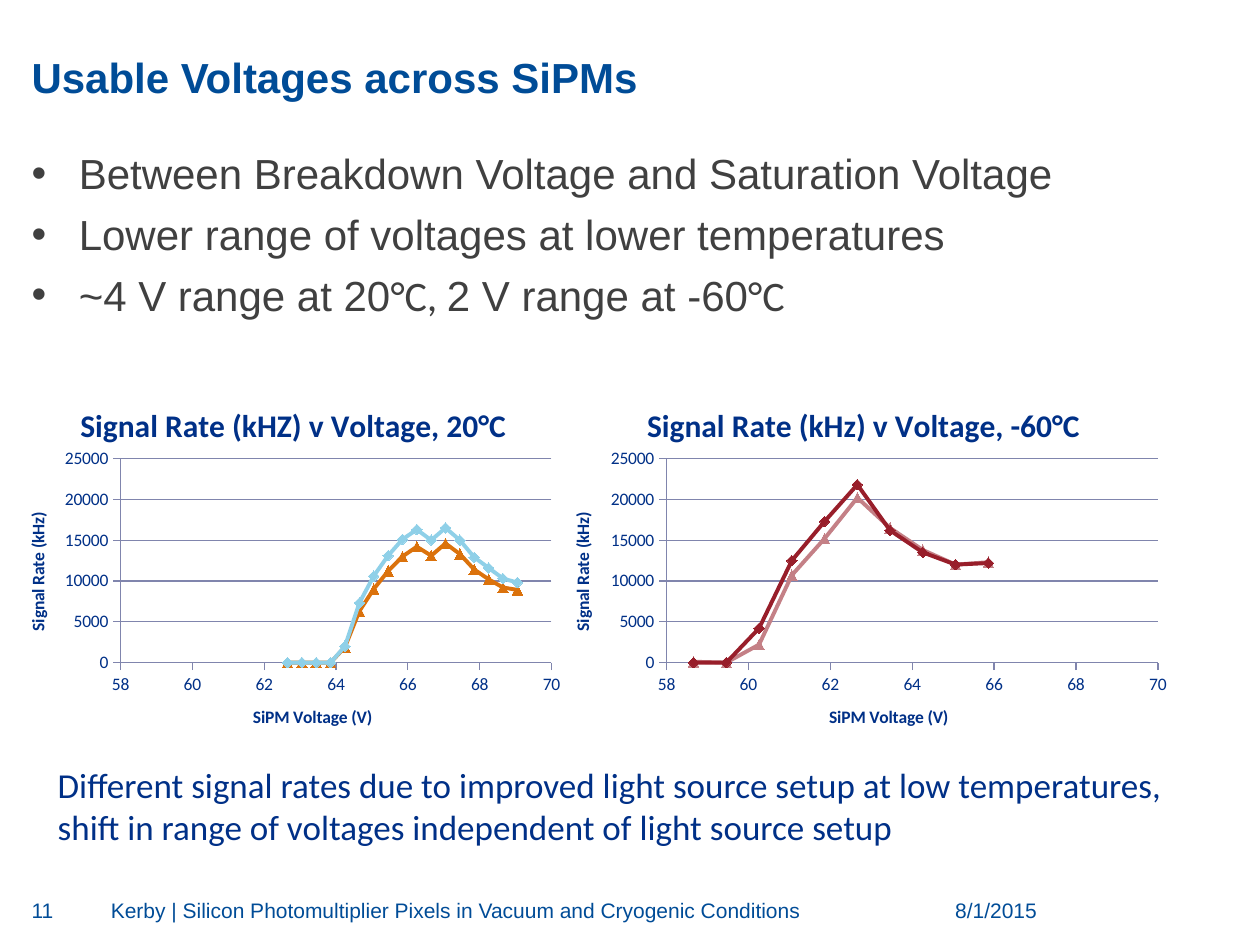
from lxml import etree
from pptx import Presentation
from pptx import util as u
from pptx.chart import data as chart_data
from pptx.dml import color
from pptx.enum import chart as chart_enum, text
from pptx.oxml import ns

COLORS = {
    "heading": "004C97", "body": "404040", "navy": "003087", "grid": "8085AD",
    "sky": "8FD0E8", "orange": "DB720C", "crimson": "981E2A", "rose": "C48086",
}
FORMATS = {
    "title": {"size": 24, "name": "Arial", "color": "heading", "bold": True},
    "body": {"size": 24, "name": "Arial", "color": "body"},
    "degree": {"size": 24, "name": "Calibri", "color": "body"},
    "footer": {"size": 12, "name": "Arial", "color": "heading"},
    "note": {"size": 20, "name": "Calibri", "color": "navy"},
    "chart": {"size": 10, "name": "Calibri", "color": "navy"},
    "chart title": {"size": 18, "name": "Calibri", "color": "navy", "bold": True},
    "axis title": {"size": 10, "name": "Calibri", "color": "navy", "bold": True},
}
BULLETS = [
    [("Between Breakdown Voltage and Saturation Voltage", "body")],
    [("Lower range of voltages at lower temperatures", "body")],
    [("~4 V range at 20", "body"), ("°C, ", "degree"),
     ("2 V range at -60", "body"), ("°C", "degree")],
]
FOOTERS = [
    ("8/1/2015", (7.05, 7.12, 1.18, 0.26), text.PP_ALIGN.RIGHT),
    ("Kerby | Silicon Photomultiplier Pixels in Vacuum and Cryogenic Conditions",
     (0.88, 7.12, 5.88, 0.26), text.PP_ALIGN.LEFT),
    ("11", (0.25, 7.12, 0.49, 0.26), text.PP_ALIGN.LEFT),
]
CHARTS = [
    {"box": (0, 2.98, 4.56, 3), "title": "Signal Rate (kHZ) v Voltage, 20°C",
     "title_at": (0.13, 0.06), "plot": (0.21, 0.22, 0.75, 0.54),
     "start": 69.05, "step": 0.4, "colors": ("sky", "orange"),
     "rates": ([9800, 10300, 11600, 12900, 15000, 16500, 15000, 16300, 15100,
                13100, 10600, 7300, 2000, 0, 0, 0, 0],
               [8900, 9200, 10200, 11400, 13300, 14600, 13100, 14200, 13000,
                11200, 9000, 6300, 1900, 0, 0, 0, 0])},
    {"box": (4.34, 2.98, 5, 3), "title": "Signal Rate (kHz) v Voltage, -60°C",
     "title_at": (0.15, 0.06), "plot": (0.19, 0.22, 0.78, 0.54),
     "start": 65.86, "step": 0.8, "colors": ("crimson", "rose"),
     "rates": ([12200, 12000, 13500, 16200, 21800, 17300, 12500, 4200, 0, 0],
               [12300, 12000, 13800, 16500, 20200, 15200, 10700, 2200, 0, 100])},
]
MARKERS = (chart_enum.XL_MARKER_STYLE.DIAMOND, chart_enum.XL_MARKER_STYLE.TRIANGLE)


def rgb(name):
    return color.RGBColor.from_string(COLORS[name])


def format_font(font, style):
    for attribute, value in FORMATS[style].items():
        if attribute == "color":
            font.color.rgb = rgb(value)
        else:
            setattr(font, attribute, u.Pt(value) if attribute == "size" else value)


def place(shape, box):
    for attribute, value in zip(("left", "top", "width", "height"), box):
        setattr(shape, attribute, u.Inches(value))


def prepare_frame(frame, inset=True):
    frame.word_wrap = True
    frame.auto_size = text.MSO_AUTO_SIZE.NONE
    if not inset:
        for side in ("left", "top", "right", "bottom"):
            setattr(frame, f"margin_{side}", 0)


def add_run(paragraph, wording, style):
    run = paragraph.add_run()
    run.text = wording
    format_font(run.font, style)


def fill_title(slide, box):
    shape = slide.shapes.title
    place(shape, box)
    frame = shape.text_frame
    prepare_frame(frame, inset=False)
    frame.vertical_anchor = text.MSO_ANCHOR.BOTTOM
    paragraph = frame.paragraphs[0]
    paragraph.alignment = text.PP_ALIGN.LEFT
    add_run(paragraph, "Usable Voltages across SiPMs", "title")


def fill_body(slide, box):
    shape = slide.placeholders[1]
    place(shape, box)
    frame = shape.text_frame
    prepare_frame(frame, inset=False)
    for index, runs in enumerate(BULLETS):
        paragraph = frame.add_paragraph() if index else frame.paragraphs[0]
        paragraph.space_before = u.Pt(6 if index else 0)
        for wording, style in runs:
            add_run(paragraph, wording, style)


def add_text(slide, wording, box, style, alignment=text.PP_ALIGN.LEFT, inset=True):
    shape = slide.shapes.add_textbox(*map(u.Inches, box))
    prepare_frame(shape.text_frame, inset)
    paragraph = shape.text_frame.paragraphs[0]
    paragraph.alignment = alignment
    add_run(paragraph, wording, style)


def set_layout(element, values, inner=False):
    for old in element.findall(ns.qn("c:layout")):
        element.remove(old)
    layout = etree.Element(ns.qn("c:layout"))
    manual = etree.SubElement(layout, ns.qn("c:manualLayout"))
    settings = [("layoutTarget", "inner")] if inner else []
    settings += [("xMode", "edge"), ("yMode", "edge")]
    settings += list(zip("xywh", values))
    for tag, value in settings:
        etree.SubElement(manual, ns.qn(f"c:{tag}")).set("val", str(value))
    if inner:
        element.insert(0, layout)
    else:
        element.find(ns.qn("c:tx")).addnext(layout)


def set_title(owner, wording, style):
    owner.has_title = True
    frame = (owner.chart_title if style == "chart title" else owner.axis_title).text_frame
    add_run(frame.paragraphs[0], wording, style)


def format_axis(axis, title, limits):
    for attribute, value in zip(("minimum_scale", "maximum_scale", "major_unit"), limits):
        setattr(axis, attribute, value)
    axis.major_tick_mark = chart_enum.XL_TICK_MARK.OUTSIDE
    axis.minor_tick_mark = chart_enum.XL_TICK_MARK.NONE
    axis.tick_labels.number_format = "General"
    axis.tick_labels.number_format_is_linked = False
    axis.format.line.color.rgb = rgb("grid")
    axis.format.line.width = u.Pt(0.75)
    set_title(axis, title, "axis title")


def add_rate_chart(slide, details):
    data = chart_data.XyChartData()
    for number, rates in enumerate(details["rates"], 1):
        series = data.add_series(f"Series {number}")
        for index, rate in enumerate(rates):
            series.add_data_point(round(details["start"] - index * details["step"], 2), rate)
    chart = slide.shapes.add_chart(chart_enum.XL_CHART_TYPE.XY_SCATTER_LINES,
                                   *map(u.Inches, details["box"]), data).chart
    format_font(chart.font, "chart")
    chart.has_legend = False
    set_title(chart, details["title"], "chart title")
    chart.chart_title.include_in_layout = False
    format_axis(chart.category_axis, "SiPM Voltage (V)", (58, 70, 2))
    format_axis(chart.value_axis, "Signal Rate (kHz)", (0, 25000, 5000))
    chart.category_axis.has_major_gridlines = False
    chart.value_axis.has_major_gridlines = True
    gridline = chart.value_axis.major_gridlines.format.line
    gridline.color.rgb = rgb("grid")
    gridline.width = u.Pt(0.75)
    plot = chart.plots[0]
    plot.vary_by_categories = False
    for series, name, marker in zip(plot.series, details["colors"], MARKERS):
        series.smooth = False
        series.format.line.color.rgb = rgb(name)
        series.format.line.width = u.Pt(2.25)
        series.marker.style = marker
        series.marker.size = 6
        series.marker.format.fill.solid()
        series.marker.format.fill.fore_color.rgb = rgb(name)
        series.marker.format.line.color.rgb = rgb(name)
    root = chart.element.find(ns.qn("c:chart"))
    set_layout(root.find(ns.qn("c:title")), details["title_at"])
    set_layout(root.find(ns.qn("c:plotArea")), details["plot"], inner=True)


def main():
    presentation = Presentation()
    presentation.slide_width, presentation.slide_height = u.Inches(10), u.Inches(7.5)
    slide = presentation.slides.add_slide(presentation.slide_layouts[1])
    fill_title(slide, (0.25, 0.11, 9.5, 0.7))
    fill_body(slide, (0.25, 1.17, 9.48, 5.42))
    for wording, box, alignment in FOOTERS:
        add_text(slide, wording, box, "footer", alignment, inset=False)
    for details in CHARTS:
        add_rate_chart(slide, details)
    add_text(slide,
             "Different signal rates due to improved light source setup at low "
             "temperatures, shift in range of voltages independent of light source setup",
             (0.36, 6.01, 9.14, 1.18), "note")
    presentation.save("out.pptx")


if __name__ == "__main__":
    main()
